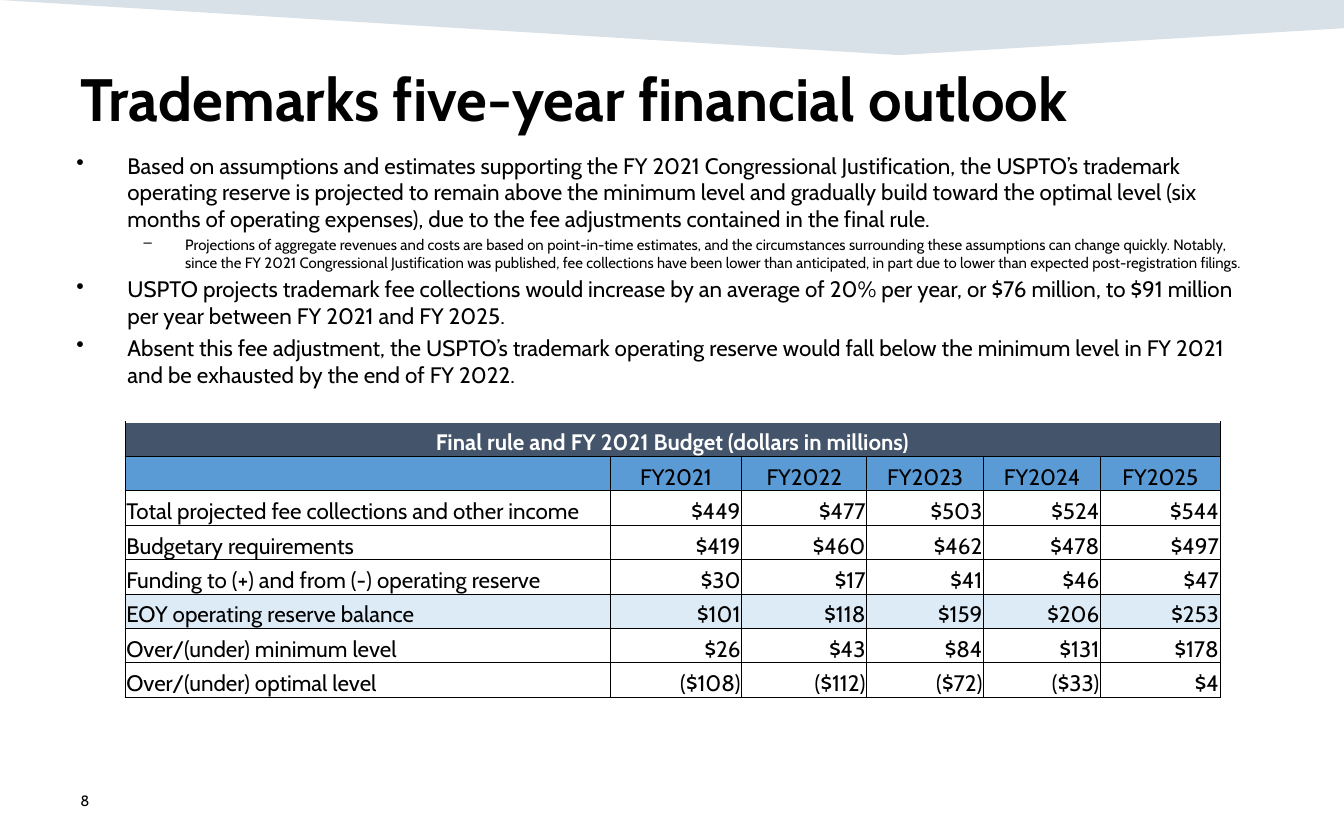
from lxml import etree
from pptx import Presentation
from pptx import util as u
from pptx.dml.color import RGBColor
from pptx.enum import text
from pptx.oxml import ns

TITLE = "Trademarks five-year financial outlook"
NUMBER = "8"
# level, text
POINTS = [
    (0, "Based on assumptions and estimates supporting the FY 2021 Congressional Justification, the USPTO’s trademark operating reserve is projected to remain above the minimum level and gradually build toward the optimal level (six months of operating expenses), due to the fee adjustments contained in the final rule."),
    (1, "Projections of aggregate revenues and costs are based on point-in-time estimates, and the circumstances surrounding these assumptions can change quickly. Notably, since the FY 2021 Congressional Justification was published, fee collections have been lower than anticipated, in part due to lower than expected post-registration filings."),
    (0, "USPTO projects trademark fee collections would increase by an average of 20% per year, or $76 million, to $91 million per year between FY 2021 and FY 2025."),
    (0, "Absent this fee adjustment, the USPTO’s trademark operating reserve would fall below the minimum level in FY 2021 and be exhausted by the end of FY 2022."),
]
# bullet, left margin, hanging indent, text size
LEVELS = [("•", 0.38, 0.38, 12), ("–", 0.81, 0.31, 8)]

ROWS = [
    ["Final rule and FY 2021 Budget (dollars in millions)", "", "", "", "", ""],
    ["", "FY2021", "FY2022", "FY2023", "FY2024", "FY2025"],
    ["Total projected fee collections and other income", "$449", "$477", "$503", "$524", "$544"],
    ["Budgetary requirements", "$419", "$460", "$462", "$478", "$497"],
    ["Funding to (+) and from (-) operating reserve", "$30", "$17", "$41", "$46", "$47"],
    ["EOY operating reserve balance", "$101", "$118", "$159", "$206", "$253"],
    ["Over/(under) minimum level", "$26", "$43", "$84", "$131", "$178"],
    ["Over/(under) optimal level", "($108)", "($112)", "($72)", "($33)", "$4"],
]
WIDTHS = [3.61, 0.98, 0.93, 0.87, 0.87, 0.89]
ROW_H = 2.05 / len(ROWS)
FILLS = {0: "44546A", 1: "5B9BD5", 5: "DDEBF7"}
BAND = [(0, 0), (10, 0), (10, 0.21), (6.69, 0.41)]

FONT, BLACK, WHITE = "Cabin", "000000", "FFFFFF"
ALIGN = text.PP_ALIGN


def paint(fill, color):
    fill.solid()
    fill.fore_color.rgb = RGBColor.from_string(color)


def style(para, size, color=BLACK, bold=False):
    for run in para.runs:
        run.font.name = FONT
        run.font.size = u.Pt(size)
        run.font.bold = bold
        run.font.color.rgb = RGBColor.from_string(color)


def add_box(slide, x, y, w, h, words=""):
    frame = slide.shapes.add_textbox(*map(u.Inches, (x, y, w, h))).text_frame
    frame.word_wrap = True
    frame.text = words
    return frame


def add_band(slide):
    start, *rest = [(u.Inches(x), u.Inches(y)) for x, y in BAND]
    pen = slide.shapes.build_freeform(*start)
    pen.add_line_segments(rest, close=True)
    band = pen.convert_to_shape()
    band.shadow.inherit = False
    band.line.fill.background()
    paint(band.fill, "003865")
    tint = band.fill._xPr.find(".//" + ns.qn("a:srgbClr"))
    etree.SubElement(tint, ns.qn("a:alpha"), val="15000")


def add_points(slide):
    frame = add_box(slide, 0.47, 1.08, 9, 3.66)
    for i, (level, words) in enumerate(POINTS):
        mark, left, hang, size = LEVELS[level]
        para = frame.add_paragraph() if i else frame.paragraphs[0]
        para.text = words
        para.level = level
        props = para._p.get_or_add_pPr()
        props.set("marL", str(u.Inches(left)))
        props.set("indent", str(-u.Inches(hang)))
        etree.SubElement(props, ns.qn("a:buChar"), char=mark)
        if i:
            para.space_before = u.Pt(size * 0.2)
        style(para, size)


def set_border(cell, sides):
    props = cell._tc.get_or_add_tcPr()
    for side in sides:
        line = etree.SubElement(props, ns.qn("a:ln" + side), w=str(u.Pt(0.5)))
        fill = etree.SubElement(line, ns.qn("a:solidFill"))
        etree.SubElement(fill, ns.qn("a:srgbClr"), val=BLACK)


def add_budget(slide):
    table = slide.shapes.add_table(
        len(ROWS), len(WIDTHS), u.Inches(0.93), u.Inches(3.14),
        u.Inches(sum(WIDTHS)), u.Inches(ROW_H * len(ROWS))).table
    for col, width in zip(table.columns, WIDTHS):
        col.width = u.Inches(width)
    for r, row in enumerate(ROWS):
        table.rows[r].height = u.Inches(ROW_H)
        for c, words in enumerate(row):
            cell = table.cell(r, c)
            set_border(cell, "LRTB" if r else "LRB")
            if r in FILLS:
                paint(cell.fill, FILLS[r])
            else:
                cell.fill.background()
            cell.margin_left = cell.margin_right = cell.margin_top = u.Inches(0.01)
            cell.margin_bottom = 0
            cell.vertical_anchor = text.MSO_ANCHOR.BOTTOM
            cell.text = words
            para = cell.text_frame.paragraphs[0]
            para.alignment = ALIGN.CENTER if r < 2 else ALIGN.RIGHT if c else ALIGN.LEFT
            style(para, 12, BLACK if r else WHITE, r == 0)
            # keeps empty cells from stretching their row
            para._p.get_or_add_endParaRPr().set("sz", "1200")
    table.cell(0, 0).merge(table.cell(0, len(WIDTHS) - 1))


def main():
    deck = Presentation()
    deck.slide_width, deck.slide_height = u.Inches(10), u.Inches(6.25)
    slide = deck.slides.add_slide(deck.slide_layouts[6])
    add_band(slide)
    title = add_box(slide, 0.5, 0.41, 9, 0.97, TITLE)
    style(title.paragraphs[0], 32, bold=True)
    add_points(slide)
    add_budget(slide)
    number = add_box(slide, 0.5, 5.79, 2.25, 0.33, NUMBER)
    number.vertical_anchor = text.MSO_ANCHOR.MIDDLE
    style(number.paragraphs[0], 8)
    deck.save("out.pptx")


if __name__ == "__main__":
    main()
